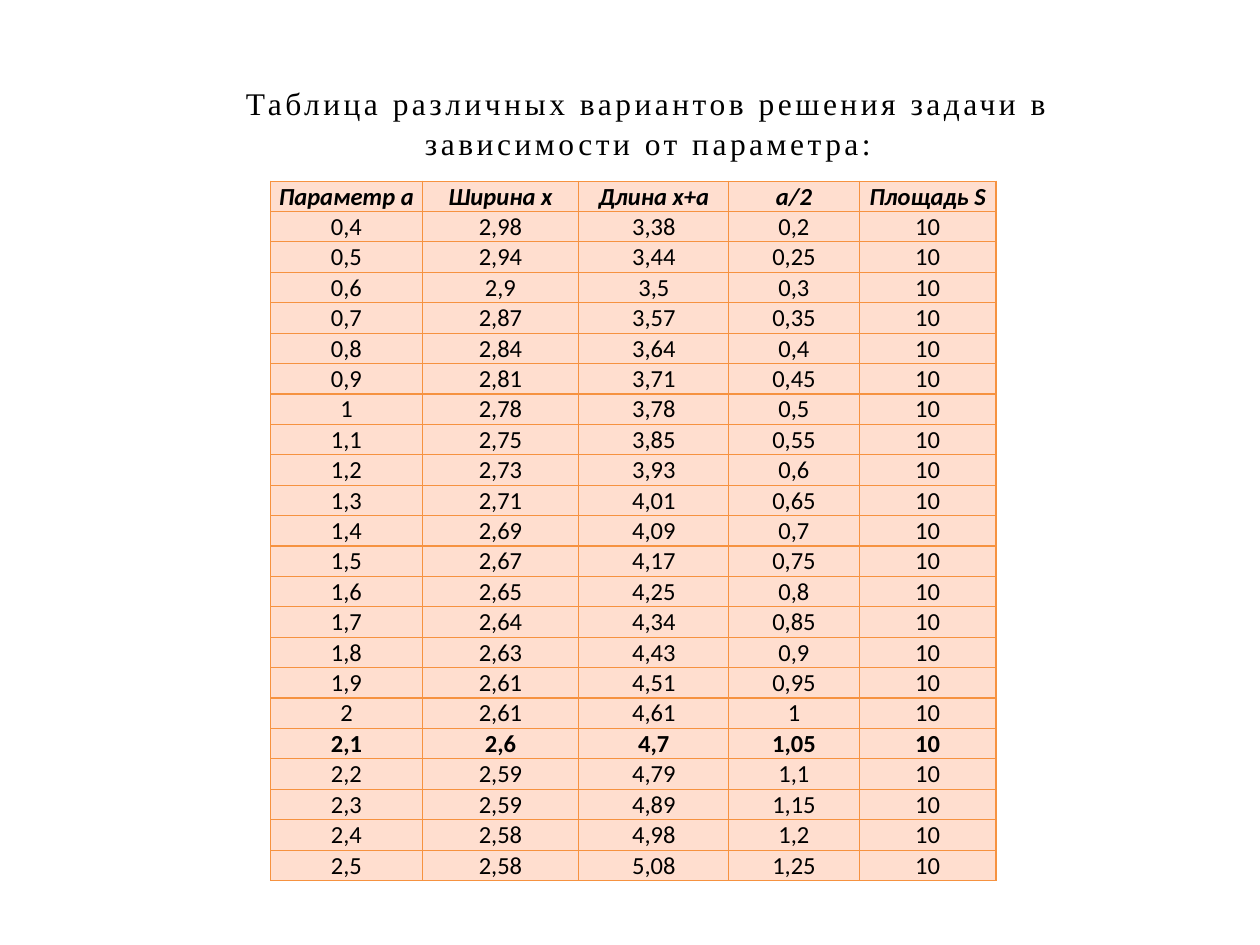
from dataclasses import dataclass

from lxml.etree import SubElement
from pptx import Presentation
from pptx.dml.color import RGBColor
from pptx.enum.text import MSO_ANCHOR, MSO_AUTO_SIZE, PP_ALIGN
from pptx.oxml.ns import qn
from pptx.slide import Slide
from pptx.table import _Cell
from pptx.util import Pt

BLACK = RGBColor(0x00, 0x00, 0x00)
CELL_FILL = RGBColor(0xFF, 0xDE, 0xCF)
BORDER = RGBColor(0xF6, 0x92, 0x40)

TABLE_LEFT, TABLE_TOP = 154.8, 103.5
ROW_HEIGHT = 17.4
AREA = "10"

# All table values are in hundredths.
FIRST_PARAMETER, PARAMETER_STEP = 40, 10
BEST_PARAMETER = 210
WIDTHS = (298, 294, 290, 287, 284, 281, 278, 275, 273, 271, 269,
          267, 265, 264, 263, 261, 261, 260, 259, 259, 258, 258)


@dataclass(frozen=True)
class Column:
    heading: str
    width: float


@dataclass(frozen=True)
class Row:
    values: tuple[str, ...]
    bold: bool = False
    italic: bool = False


COLUMNS = (
    Column("Параметр а", 86.4),
    Column("Ширина x", 89.6),
    Column("Длина x+a", 85.7),
    Column("а/2", 74.5),
    Column("Площадь S", 78.2),
)


def decimal_comma(hundredths: float) -> str:
    return f"{hundredths / 100:g}".replace(".", ",")


def solution_rows() -> list[Row]:
    rows = [Row(tuple(column.heading for column in COLUMNS), True, True)]
    for index, width in enumerate(WIDTHS):
        parameter = FIRST_PARAMETER + index * PARAMETER_STEP
        numbers = (parameter, width, width + parameter, parameter / 2)
        values = tuple(decimal_comma(number) for number in numbers)
        rows.append(Row(values + (AREA,), parameter == BEST_PARAMETER))
    return rows


def add_borders(cell: _Cell) -> None:
    properties = cell._tc.get_or_add_tcPr()
    for position, side in enumerate(("a:lnL", "a:lnR", "a:lnT", "a:lnB")):
        line = SubElement(properties, qn(side), w=str(Pt(0.75)))
        fill = SubElement(line, qn("a:solidFill"))
        SubElement(fill, qn("a:srgbClr"), val=str(BORDER))
        properties.insert(position, line)


def fill_cell(cell: _Cell, text: str, row: Row) -> None:
    cell.fill.solid()
    cell.fill.fore_color.rgb = CELL_FILL
    add_borders(cell)
    cell.vertical_anchor = MSO_ANCHOR.BOTTOM
    cell.margin_left = cell.margin_right = Pt(0.7)
    cell.margin_top, cell.margin_bottom = Pt(0.3), Pt(0)
    cell.text = text
    paragraph = cell.text_frame.paragraphs[0]
    paragraph.alignment = PP_ALIGN.CENTER
    font = paragraph.runs[0].font
    font.name, font.size = "Calibri", Pt(14)
    font.bold, font.italic = row.bold, row.italic
    font.color.rgb = BLACK


def add_title(slide: Slide) -> None:
    title = slide.shapes.title
    title.left, title.top = Pt(76.3), Pt(43.2)
    title.width, title.height = Pt(588.2), Pt(51.1)
    text_frame = title.text_frame
    text_frame.text = ("Таблица различных вариантов решения задачи "
                       "в зависимости от параметра:")
    text_frame.word_wrap = True
    text_frame.auto_size = MSO_AUTO_SIZE.SHAPE_TO_FIT_TEXT
    text_frame.vertical_anchor = MSO_ANCHOR.TOP
    paragraph = text_frame.paragraphs[0]
    paragraph.alignment = PP_ALIGN.CENTER
    paragraph.line_spacing = 1.06
    font = paragraph.runs[0].font
    font.name, font.size = "Times New Roman", Pt(18)
    font.color.rgb = BLACK
    paragraph.runs[0]._r.get_or_add_rPr().set("spc", "200")


def add_solution_table(slide: Slide) -> None:
    rows = solution_rows()
    table = slide.shapes.add_table(
        len(rows), len(COLUMNS), Pt(TABLE_LEFT), Pt(TABLE_TOP),
        Pt(sum(column.width for column in COLUMNS)),
        Pt(ROW_HEIGHT * len(rows)),
    ).table
    table.first_row = table.horz_banding = False
    for table_column, column in zip(table.columns, COLUMNS):
        table_column.width = Pt(column.width)
    for table_row, row in zip(table.rows, rows):
        table_row.height = Pt(ROW_HEIGHT)
        for cell, text in zip(table_row.cells, row.values):
            fill_cell(cell, text, row)


def main() -> None:
    presentation = Presentation()
    presentation.slide_width, presentation.slide_height = Pt(720), Pt(540)
    slide = presentation.slides.add_slide(presentation.slide_layouts[5])
    add_title(slide)
    add_solution_table(slide)
    presentation.save("out.pptx")


if __name__ == "__main__":
    main()
